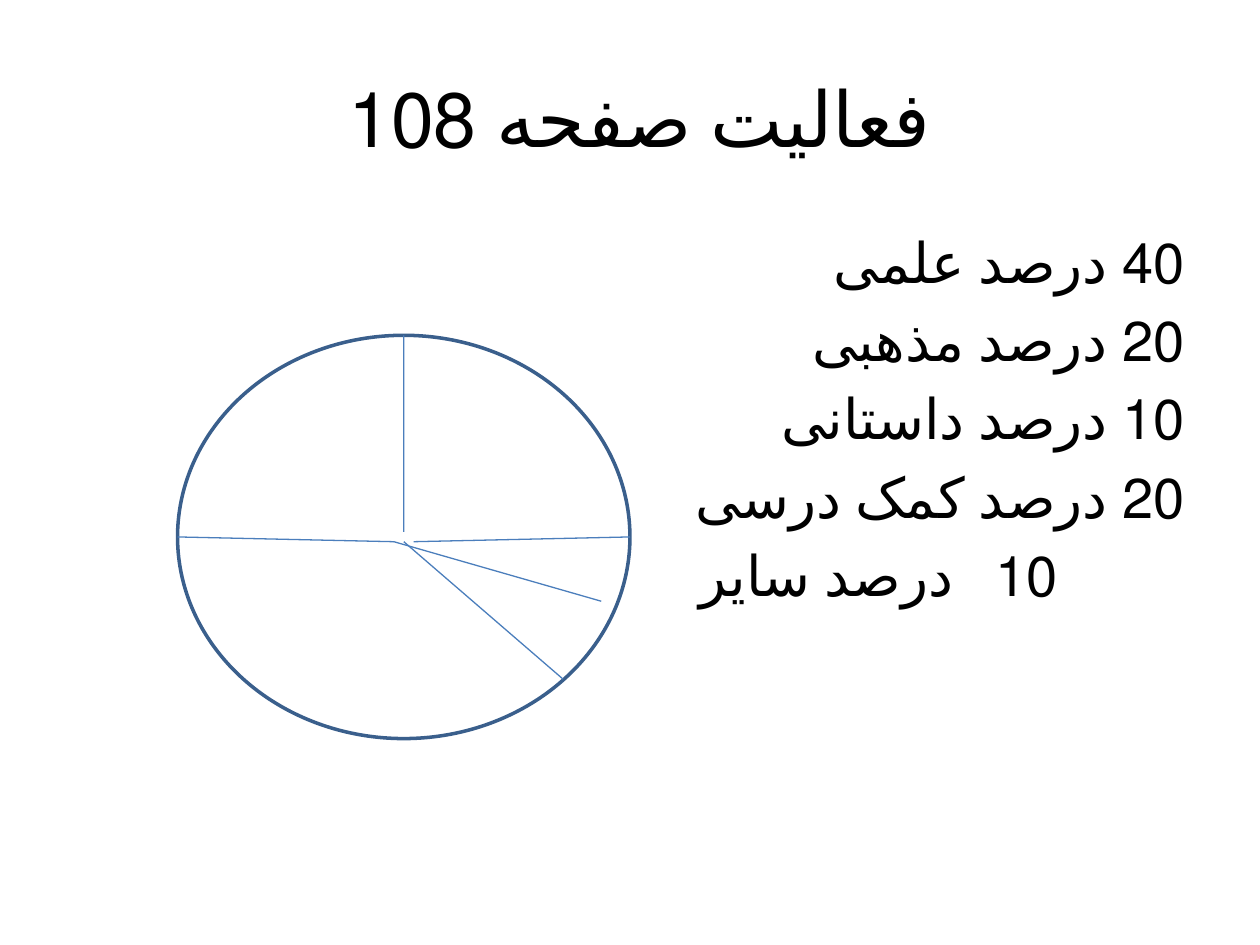
from lxml.etree import SubElement
from pptx import Presentation
from pptx.dml.color import RGBColor
from pptx.enum.lang import MSO_LANGUAGE_ID
from pptx.enum.shapes import MSO_CONNECTOR, MSO_SHAPE
from pptx.enum.text import MSO_ANCHOR, PP_ALIGN
from pptx.oxml.ns import qn
from pptx.util import Cm, Pt

COLORS = {"text": "000000", "paper": "FFFFFF", "outline": "3A5F8C", "divider": "4B7EBC"}
TITLE = "فعالیت صفحه 108 "
SHARES = [
    "40 درصد علمی ",
    "20 درصد مذهبی",
    "10 درصد داستانی",
    "20 درصد کمک درسی",
    "10   درصد سایر",
]
HANGING = 0.95
LAST_INDENT = 2.55


class PageBuilder:
    """Holds the style and the current slide, and adds each kind of element."""

    def __init__(self, deck, layout_index):
        self.font = "Calibri"
        self.language = MSO_LANGUAGE_ID.FARSI
        self.page = deck.slides.add_slide(deck.slide_layouts[layout_index])

    def color(self, name):
        return RGBColor.from_string(COLORS[name])

    def place(self, box, left, top, width, height):
        box.left, box.top = Cm(left), Cm(top)
        box.width, box.height = Cm(width), Cm(height)

    def format_paragraph(self, para, size, align):
        para.alignment = align
        para._p.get_or_add_pPr().set("rtl", "1")
        for span in para.runs:
            span.font.name = self.font
            span.font.language_id = self.language
            span.font.size = Pt(size)
            span.font.color.rgb = self.color("text")

    def title(self, text, *bounds):
        box = self.page.shapes.title
        self.place(box, *bounds)
        box.text_frame.text = text
        box.text_frame.vertical_anchor = MSO_ANCHOR.MIDDLE
        self.format_paragraph(box.text_frame.paragraphs[0], 44, PP_ALIGN.CENTER)

    def share_list(self, items, *bounds):
        box = self.page.placeholders[1]
        self.place(box, *bounds)
        box.text_frame.text = "\n".join(items)
        for para in box.text_frame.paragraphs:
            self.format_paragraph(para, 32, PP_ALIGN.RIGHT)
            self.indent(para, HANGING)
        self.indent(para, HANGING + LAST_INDENT)

    def indent(self, para, margin):
        properties = para._p.get_or_add_pPr()
        properties.set("marL", str(Cm(margin)))
        properties.set("indent", str(-Cm(HANGING)))
        if properties.find(qn("a:buNone")) is None:
            SubElement(properties, qn("a:buNone"))

    def circle(self, *bounds):
        shape = self.page.shapes.add_shape(MSO_SHAPE.OVAL, *map(Cm, bounds))
        shape.shadow.inherit = False
        shape.fill.solid()
        shape.fill.fore_color.rgb = self.color("paper")
        shape.line.color.rgb = self.color("outline")
        shape.line.width = Pt(2)
        return shape

    def divider(self, start, end):
        line = self.page.shapes.add_connector(
            MSO_CONNECTOR.STRAIGHT, *map(Cm, (*start, *end))
        )
        line.line.color.rgb = self.color("divider")
        line.line.width = Pt(0.75)
        SubElement(line._element.spPr, qn("a:effectLst"))
        return line


def main():
    deck = Presentation()
    deck.slide_width, deck.slide_height = Cm(25.4), Cm(19.05)
    builder = PageBuilder(deck, 1)
    builder.title(TITLE, 1.27, 0.76, 22.86, 3.18)
    builder.share_list(SHARES, 1.27, 4.45, 22.86, 12.57)

    left, top, width, height = 3.58, 6.76, 9.12, 8.13
    circle = builder.circle(left, top, width, height)
    center, middle = left + width / 2, top + height / 2
    hub, gap = 10.92, 0.2
    builder.divider((center, top), (center, hub - gap)).begin_connect(circle, 0)
    for start, end in (
        ((center - gap, hub), (left, middle)),
        ((center, hub), (11.35, 13.69)),
        ((center - gap, hub), (12.12, 12.12)),
        ((center + gap, hub), (left + width, middle)),
    ):
        builder.divider(start, end)
    deck.save("out.pptx")


if __name__ == "__main__":
    main()
